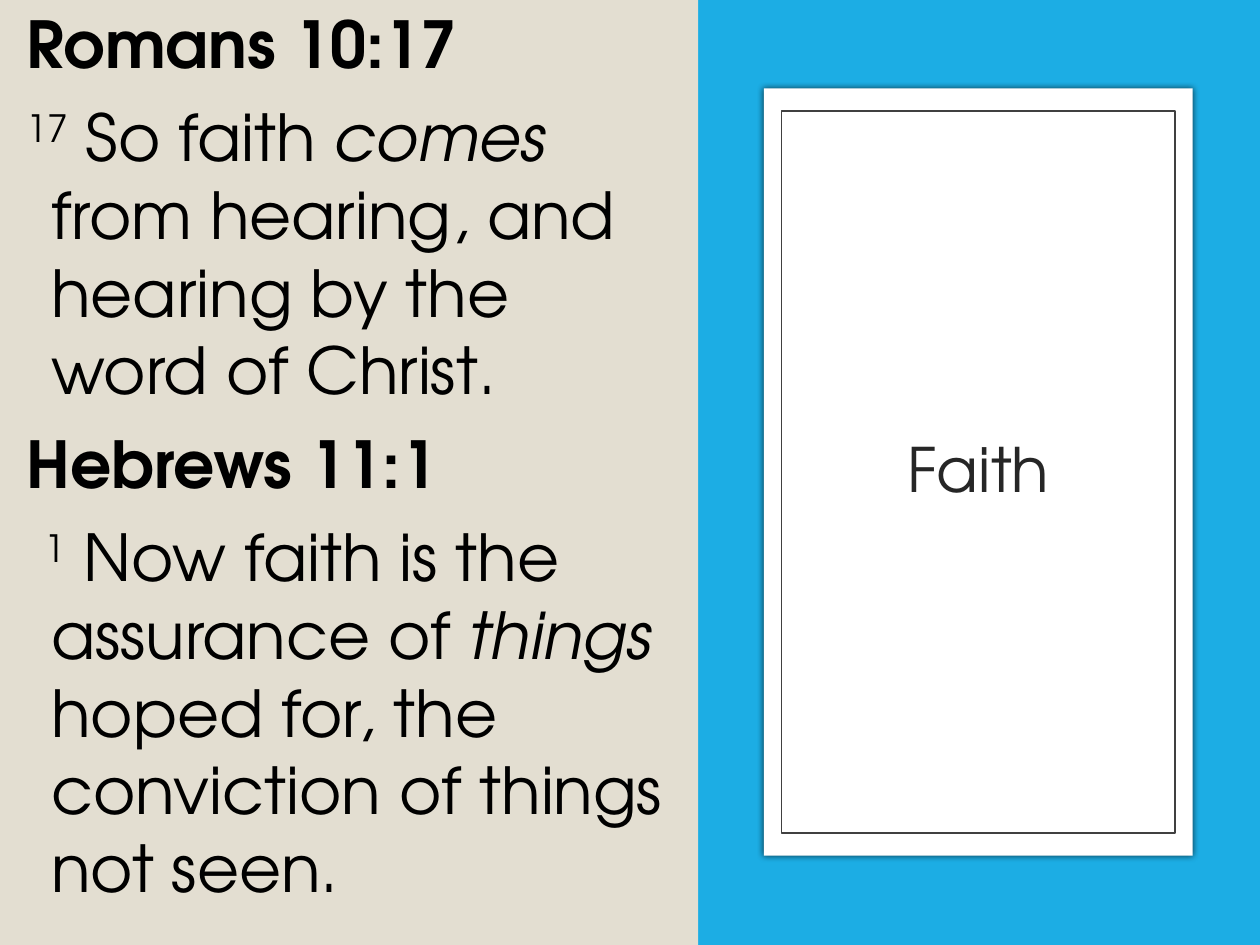
from lxml import etree
from pptx import Presentation
from pptx.dml.color import RGBColor
from pptx.enum import shapes, text
from pptx.oxml import ns
from pptx.util import Pt

BLUE = RGBColor(0x1C, 0xAD, 0xE4)
CREAM = RGBColor(0xE3, 0xDE, 0xD1)
WHITE = RGBColor(0xFF, 0xFF, 0xFF)
FRAME = RGBColor(0x40, 0x40, 0x40)
BLACK = RGBColor(0, 0, 0)
TITLE = RGBColor(0x26, 0x26, 0x26)
FONT = "TeX Gyre Adventor"
WIDTH, HEIGHT = 720, 540
PANEL_WIDTH = 399

VERSES = [
    [("Romans 10:17", "bold")],
    [("17", "super"), (" So faith ", ""), ("comes", "italic"),
     (" from hearing, and hearing by the word of Christ.", "")],
    [("Hebrews 11:1", "bold")],
    [(" ", ""), ("1", "super"), (" Now faith is the assurance of ", ""),
     ("things", "italic"), (" hoped for, the conviction of things not seen.", "")],
]


def add_rectangle(page, box, fill, line=None):
    shape = page.shapes.add_shape(shapes.MSO_SHAPE.RECTANGLE, *map(Pt, box))
    shape.shadow.inherit = False
    shape.fill.solid()
    shape.fill.fore_color.rgb = fill
    if line is None:
        shape.line.fill.background()
    else:
        shape.line.color.rgb = line
        shape.line.width = Pt(0.75)
    return shape


def add_soft_shadow(shape, blur, opacity):
    effects = shape._element.spPr.find(ns.qn("a:effectLst"))
    shadow = etree.SubElement(effects, ns.qn("a:outerShdw"),
                              blurRad=str(Pt(blur)), dist="0", dir="0")
    color = etree.SubElement(shadow, ns.qn("a:srgbClr"), val="000000")
    etree.SubElement(color, ns.qn("a:alpha"), val=str(opacity * 1000))


def style_span(span, size, color):
    span.font.name = FONT
    span.font.size = Pt(size)
    span.font.color.rgb = color


def add_title_card(page, box, heading):
    left, top, width, height = box
    card = add_rectangle(page, box, WHITE)
    add_soft_shadow(card, 4, 66)
    add_rectangle(page, (left + 10, top + 13, width - 20, height - 26), WHITE, FRAME)

    title = page.shapes.title
    page.shapes._spTree.append(title._element)
    title.left, title.top = Pt(left + 19.5), Pt(top + 43)
    title.width, title.height = Pt(width - 39), Pt(height - 85)
    frame = title.text_frame
    frame.text = heading
    frame.word_wrap = True
    frame.auto_size = text.MSO_AUTO_SIZE.NONE
    frame.vertical_anchor = text.MSO_ANCHOR.MIDDLE
    para = frame.paragraphs[0]
    para.alignment = text.PP_ALIGN.CENTER
    para.line_spacing = 0.9
    style_span(para.runs[0], 35, TITLE)


def add_verses(page, box, verses):
    frame = page.shapes.add_textbox(*map(Pt, box)).text_frame
    frame.word_wrap = True
    frame.vertical_anchor = text.MSO_ANCHOR.TOP
    frame.margin_top = frame.margin_bottom = 0
    for index, verse in enumerate(verses):
        para = frame.add_paragraph() if index else frame.paragraphs[0]
        para.space_before = Pt(9)
        properties = para._p.get_or_add_pPr()
        properties.set("marL", str(Pt(14.4)))
        properties.set("indent", str(-Pt(14.4)))
        for words, style in verse:
            span = para.add_run()
            span.text = words
            style_span(span, 37, BLACK)
            span.font.bold = style == "bold"
            span.font.italic = style == "italic"
            if style == "super":
                span.font._element.set("baseline", "30000")


def main():
    deck = Presentation()
    deck.slide_width, deck.slide_height = Pt(WIDTH), Pt(HEIGHT)
    page = deck.slides.add_slide(deck.slide_layouts[5])
    page.background.fill.solid()
    page.background.fill.fore_color.rgb = CREAM
    add_rectangle(page, (0, 0, WIDTH, HEIGHT), BLUE)
    add_rectangle(page, (0, 0, PANEL_WIDTH, HEIGHT), CREAM)
    add_title_card(page, (436.5, 50.5, 245, 438.5), "Faith")
    add_verses(page, (8, 2, 379, 536), VERSES)
    deck.save("out.pptx")


if __name__ == "__main__":
    main()
